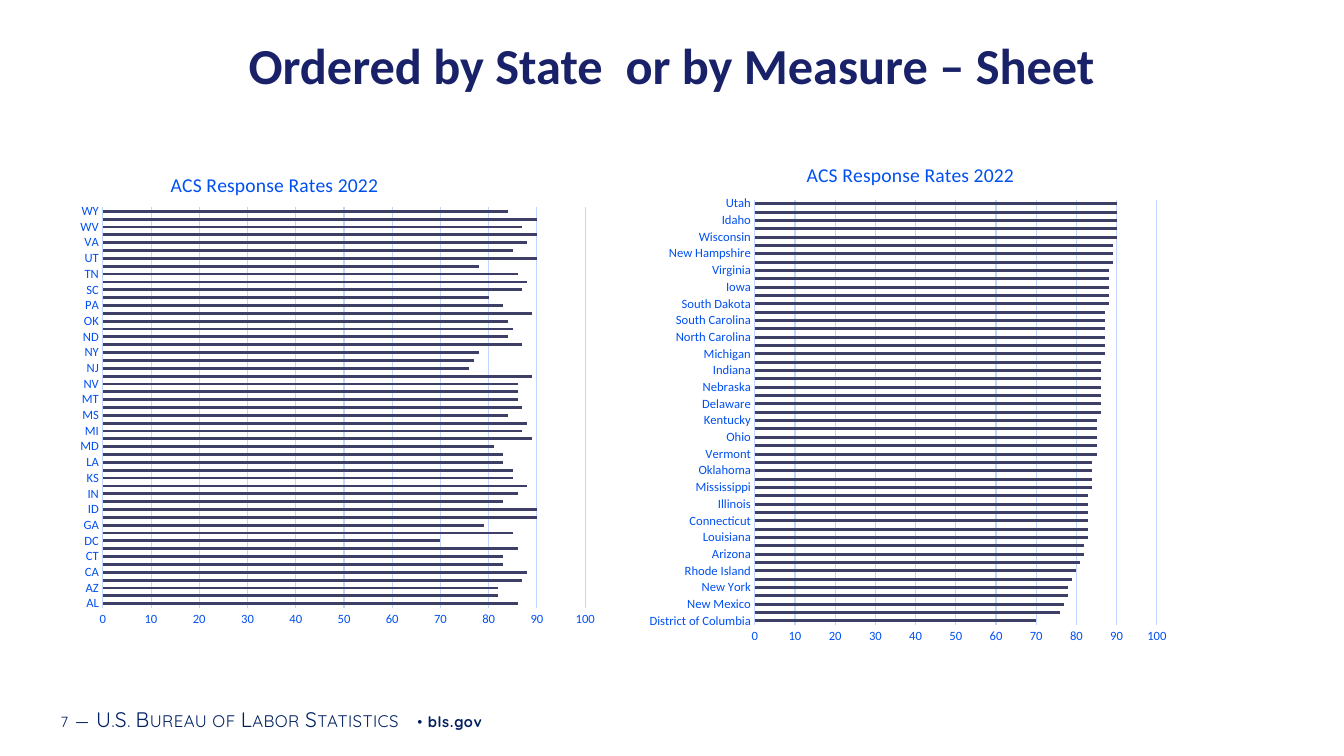
import lxml.etree
import pptx
import pptx.chart.data
import pptx.dml.color
import pptx.enum.chart
import pptx.enum.text
import pptx.oxml.ns
import pptx.util

Cm = pptx.util.Cm
Pt = pptx.util.Pt
qn = pptx.oxml.ns.qn

COLORS = {
    "title": "192168",
    "footer": "002060",
    "label": "0050F1",
    "grid": "C1D6FF",
    "bar": "3E3F67",
}

STATE_CODES = (
    "AL AK AZ AR CA CO CT DE DC FL GA HI ID IL IN IA KS KY LA ME MD MA MI MN MS MO "
    "MT NE NV NH NJ NM NY NC ND OH OK OR PA RI SC SD TN TX UT VT VA WA WV WI WY"
).split()
RATES_BY_STATE = [
    86, 82, 82, 87, 88, 83, 83, 86, 70, 85, 79, 90, 90, 83, 86, 88, 85,
    85, 83, 83, 81, 89, 87, 88, 84, 87, 86, 86, 86, 89, 76, 77, 78, 87,
    84, 85, 84, 89, 83, 80, 87, 88, 86, 78, 90, 85, 88, 90, 87, 90, 84,
]
STATE_NAMES = (
    "District of Columbia,New Jersey,New Mexico,Texas,New York,Georgia,Rhode Island,"
    "Maryland,Arizona,Alaska,Louisiana,Maine,Connecticut,Colorado,Illinois,"
    "Pennsylvania,Mississippi,North Dakota,Oklahoma,Wyoming,Vermont,Florida,Ohio,"
    "Kansas,Kentucky,Alabama,Delaware,Tennessee,Nebraska,Nevada,Indiana,Montana,"
    "Michigan,Missouri,North Carolina,West Virginia,South Carolina,Arkansas,"
    "South Dakota,California,Iowa,Minnesota,Virginia,Massachusetts,New Hampshire,"
    "Oregon,Wisconsin,Hawaii,Idaho,Washington,Utah"
).split(",")
RATES_BY_MEASURE = [
    70, 76, 77, 78, 78, 79, 80, 81, 82, 82, 83, 83, 83, 83, 83, 83, 84,
    84, 84, 84, 85, 85, 85, 85, 85, 86, 86, 86, 86, 86, 86, 86, 87, 87,
    87, 87, 87, 87, 88, 88, 88, 88, 88, 89, 89, 89, 90, 90, 90, 90, 90,
]


def rgb(name):
    return pptx.dml.color.RGBColor.from_string(COLORS[name])


def format_font(font, size, color, name="Calibri", bold=False):
    font.size = Pt(size)
    font.name = name
    font.bold = bold
    font.color.rgb = rgb(color)


def add_run(paragraph, text, size, color, name="Calibri", bold=False,
            spacing=None, small_caps=False):
    """Append formatted text; spacing is the letter spacing in points."""
    run = paragraph.add_run()
    run.text = text
    format_font(run.font, size, color, name, bold)
    properties = run.font._element
    if spacing is not None:
        properties.set("spc", str(round(spacing * 100)))
    if small_caps:
        properties.set("cap", "small")


def set_layout(parent, inner=False, **fractions):
    """Place a chart part by fractions (x, y, w, h) of the chart area."""
    layout = parent.find(qn("c:layout"))
    if layout is None:
        layout = parent.makeelement(qn("c:layout"))
        parent.insert(0, layout)
    manual = lxml.etree.SubElement(layout, qn("c:manualLayout"))
    settings = [("layoutTarget", "inner")] if inner else []
    settings += [("xMode", "edge"), ("yMode", "edge"), *fractions.items()]
    for tag, value in settings:
        lxml.etree.SubElement(manual, qn("c:" + tag)).set("val", str(value))


class SlideBuilder:
    def __init__(self, presentation):
        self.slide = presentation.slides.add_slide(presentation.slide_layouts[6])

    def text_box(self, box, runs, align=None, anchor=pptx.enum.text.MSO_ANCHOR.TOP):
        shape = self.slide.shapes.add_textbox(*map(Cm, box))
        frame = shape.text_frame
        frame.word_wrap = True
        frame.vertical_anchor = anchor
        frame.margin_left = frame.margin_right = Cm(0.18)
        frame.margin_top = frame.margin_bottom = Cm(0.1)
        paragraph = frame.paragraphs[0]
        paragraph.alignment = align
        for text, options in runs:
            add_run(paragraph, text, **options)

    def rate_chart(self, box, categories, rates, title_at, plot_at):
        data = pptx.chart.data.CategoryChartData()
        data.categories = categories
        data.add_series("Series 1", rates)
        chart = self.slide.shapes.add_chart(
            pptx.enum.chart.XL_CHART_TYPE.BAR_CLUSTERED, *map(Cm, box), data).chart
        format_font(chart.font, 10, "footer")
        chart.has_legend = False

        title = chart.chart_title
        add_run(title.text_frame.paragraphs[0], "ACS Response Rates 2022", 14, "label")
        title.include_in_layout = False
        set_layout(title._element, **title_at)
        set_layout(chart._chartSpace.chart.plotArea, inner=True, **plot_at)

        plot = chart.plots[0]
        plot.gap_width = 182
        plot.vary_by_categories = False
        fill = plot.series[0].format.fill
        fill.solid()
        fill.fore_color.rgb = rgb("bar")

        for axis in (chart.category_axis, chart.value_axis):
            axis.major_tick_mark = pptx.enum.chart.XL_TICK_MARK.NONE
            axis.minor_tick_mark = pptx.enum.chart.XL_TICK_MARK.NONE
            format_font(axis.tick_labels.font, 9, "label")
        value_axis = chart.value_axis
        value_axis.minimum_scale = 0
        value_axis.maximum_scale = 100
        value_axis.major_unit = 10
        value_axis.format.line.fill.background()
        for line in (chart.category_axis.format.line,
                     value_axis.major_gridlines.format.line):
            line.color.rgb = rgb("grid")
            line.width = Pt(0.75)


def main():
    presentation = pptx.Presentation()
    presentation.slide_width = Cm(33.87)
    presentation.slide_height = Cm(19.05)
    builder = SlideBuilder(presentation)

    footer = dict(color="footer", name="Quicksand")
    small = dict(footer, size=10.5, spacing=0.5)
    caps = dict(footer, size=15, spacing=0.3, small_caps=True)
    gap = (" ", dict(footer, size=16))
    builder.text_box((1.35, 17.6, 21.51, 1.02), [
        ("7", small), gap, ("—", caps), gap,
        ("U.S. Bureau of Labor Statistics", caps),
        (" • ", small), ("bls.gov", dict(small, bold=True)),
    ], anchor=pptx.enum.text.MSO_ANCHOR.MIDDLE)

    builder.text_box(
        (1.37, 0.76, 31.12, 3.05),
        [("Ordered by State  or by Measure – Sheet",
          dict(size=36, color="title", bold=True))],
        align=pptx.enum.text.PP_ALIGN.CENTER)

    builder.rate_chart(
        (1.78, 3.61, 13.51, 12.45), STATE_CODES, RATES_BY_STATE,
        title_at=dict(x=0.18, y=0.05), plot_at=dict(x=0.06, y=0.13, w=0.9, h=0.81))
    builder.rate_chart(
        (16.05, 3.33, 13.51, 13.08), STATE_NAMES, RATES_BY_MEASURE,
        title_at=dict(x=0.31, y=0.05), plot_at=dict(x=0.22, y=0.13, w=0.75, h=0.82))

    presentation.save("out.pptx")


if __name__ == "__main__":
    main()
